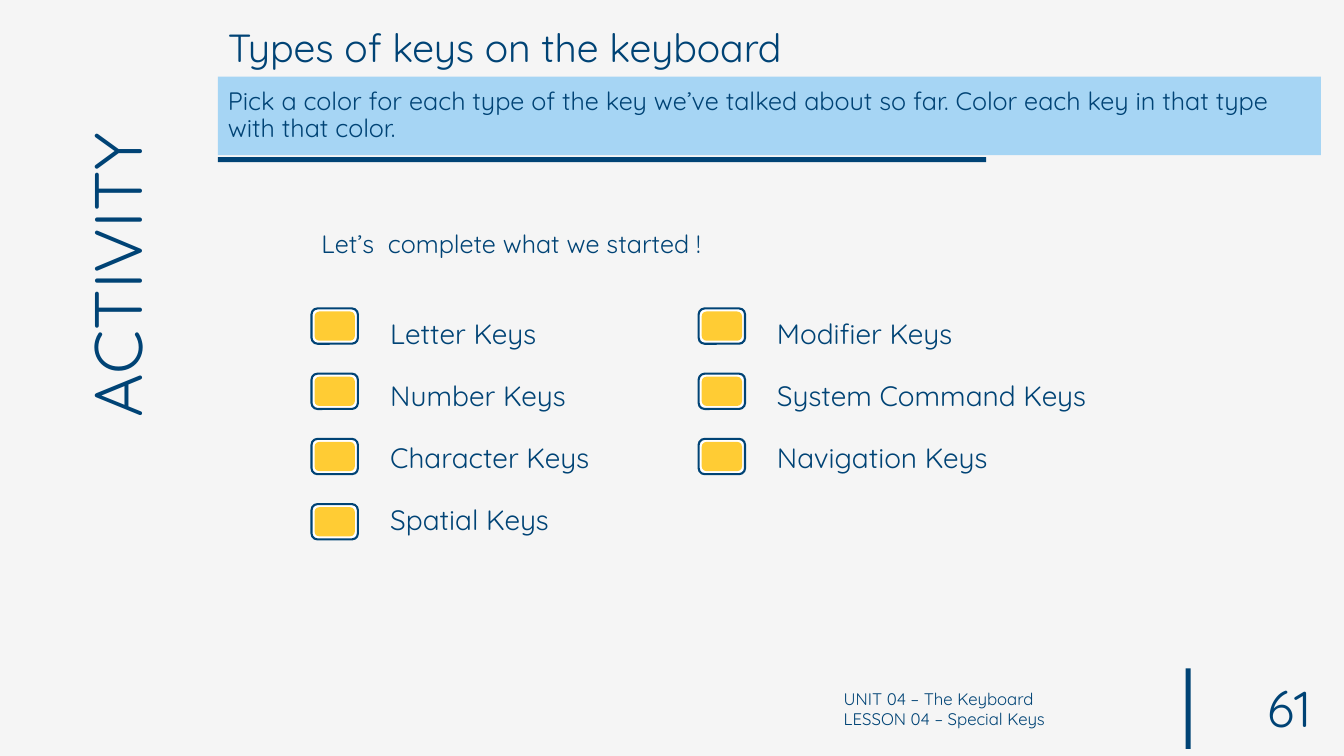
from lxml import etree
from pptx import Presentation
from pptx.dml.color import RGBColor
from pptx.enum.shapes import MSO_SHAPE
from pptx.enum.text import MSO_ANCHOR, MSO_AUTO_SIZE, PP_ALIGN
from pptx.oxml.ns import qn
from pptx.util import Inches, Pt

RECT, ROUNDED = MSO_SHAPE.RECTANGLE, MSO_SHAPE.ROUNDED_RECTANGLE
TOP, MIDDLE = MSO_ANCHOR.TOP, MSO_ANCHOR.MIDDLE
LEFT, RIGHT = PP_ALIGN.LEFT, PP_ALIGN.RIGHT
NO_FIT = MSO_AUTO_SIZE.NONE
COLORS = {"paper": "F5F5F5", "navy": "004375", "sky": "A6D5F4",
          "white": "FFFFFF", "yellow": "FFCC34"}


def add_block(preset, box, color, outline=None):
    block = slide.shapes.add_shape(preset, *map(Inches, box))
    block.shadow.inherit = False
    block.fill.solid()
    block.fill.fore_color.rgb = RGBColor.from_string(COLORS[color])
    if outline:
        block.line.color.rgb = RGBColor.from_string(COLORS[outline])
        block.line.width = Pt(1.5)
    else:
        block.line.fill.background()


def write(holder, box, lines, size, anchor=TOP, align=LEFT, spacing=1.0, before=0):
    holder.left, holder.top, holder.width, holder.height = map(Inches, box)
    frame = holder.text_frame
    frame.text = "\n".join(lines)
    frame.word_wrap = True
    frame.auto_size = NO_FIT
    frame.vertical_anchor = anchor
    for index, paragraph in enumerate(frame.paragraphs):
        properties = paragraph._p.get_or_add_pPr()
        properties.set("marL", "0")
        properties.set("indent", "0")
        etree.SubElement(properties, qn("a:buNone"))
        paragraph.alignment = align
        paragraph.line_spacing = spacing
        paragraph.space_before = Pt(before if index else 0)
        for run in paragraph.runs:
            run.font.name = "Quicksand"
            run.font.size = Pt(size)
            run.font.color.rgb = RGBColor.from_string(COLORS["navy"])


prs = Presentation()
prs.slide_width, prs.slide_height = Inches(13.33), Inches(7.5)
slide = prs.slides.add_slide(prs.slide_layouts[3])
slide.background.fill.solid()
slide.background.fill.fore_color.rgb = RGBColor.from_string(COLORS["paper"])
title, instruction, key_types = slide.placeholders

add_block(RECT, (11.76, 6.63, 0.05, 0.8), "navy")
add_block(RECT, (2.16, 1.56, 7.62, 0.05), "navy")

write(title, (2.16, 0.18, 8.43, 0.57), ["Types of keys on the keyboard"], 28)

instruction.fill.solid()
instruction.fill.fore_color.rgb = RGBColor.from_string(COLORS["sky"])
write(instruction, (2.16, 0.76, 10.94, 0.78),
      ["Pick a color for each type of the key we’ve talked about so far. "
       "Color each key in that type with that color."],
      18, anchor=MIDDLE, spacing=0.9)

write(key_types, (3.77, 2.92, 7.87, 2.6),
      ["Letter Keys", "Number Keys", "Character Keys", "Spatial Keys",
       "Modifier Keys", "System Command Keys", "Navigation Keys"],
      20, spacing=1.5, before=8.4)
key_types.text_frame._txBody.bodyPr.set("numCol", "2")

captions = [
    ((-0.7, 1.93, 3.71, 0.91), ["ACTIVITY"], 48, TOP, LEFT, 270),
    ((3.09, 2.22, 6.91, 0.4), ["Let’s  complete what we started !"], 18, TOP, LEFT, 0),
    ((8.27, 6.7, 3.37, 0.66), ["UNIT 04 – The Keyboard", "LESSON 04 – Special Keys"],
     12, MIDDLE, LEFT, 0),
    ((11.91, 6.69, 1.19, 0.66), ["61"], 36, MIDDLE, RIGHT, 0),
]
for box, lines, size, anchor, align, rotation in captions:
    caption = slide.shapes.add_textbox(0, 0, 0, 0)
    write(caption, box, lines, size, anchor, align)
    caption.rotation = rotation

for key_left, key_count in ((3.09, 4), (6.93, 3)):
    for row in range(key_count):
        key_top = 3.06 + 0.647 * row
        add_block(ROUNDED, (key_left, key_top, 0.46, 0.35), "white", "navy")
        add_block(ROUNDED, (key_left + 0.03, key_top + 0.03, 0.4, 0.29), "yellow")

prs.save("out.pptx")
